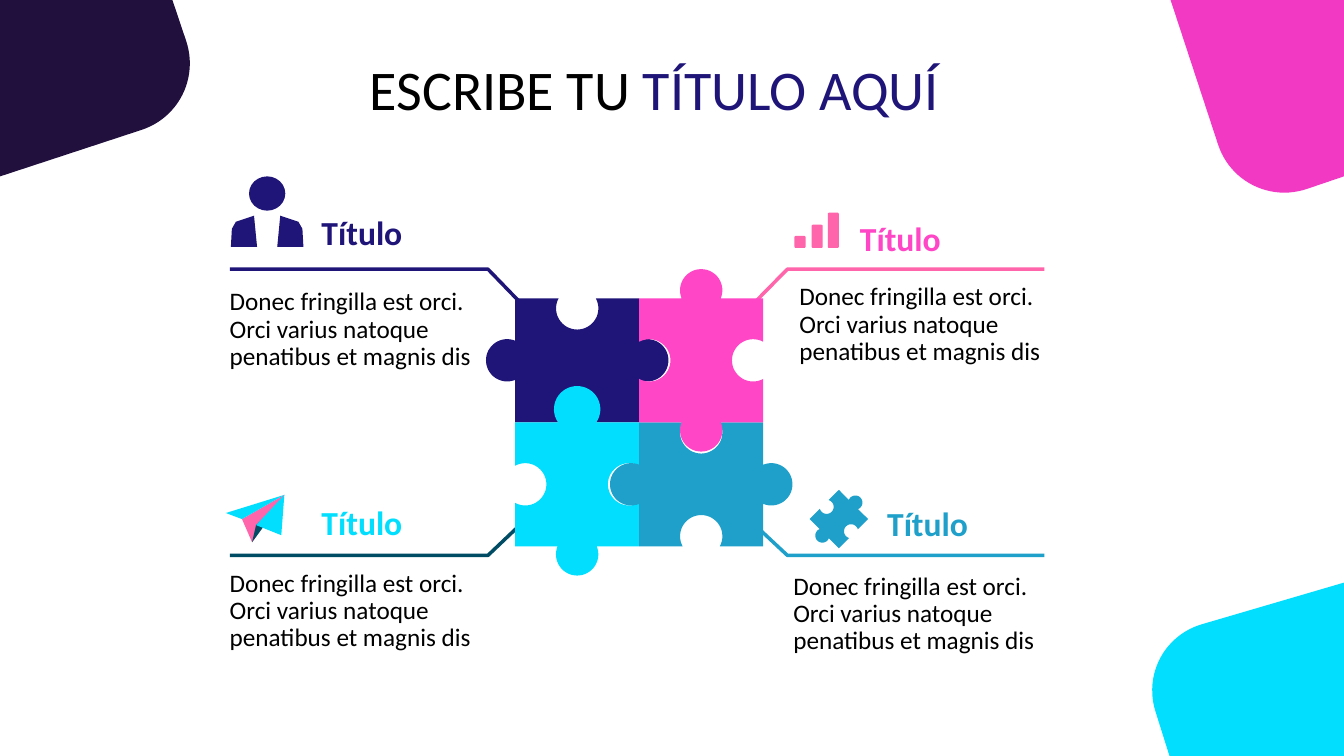
import math

import pptx
import pptx.dml.color
import pptx.enum.shapes
import pptx.enum.text
import pptx.util

Inches, Pt = pptx.util.Inches, pptx.util.Pt
SHAPE = pptx.enum.shapes.MSO_SHAPE

COLORS = {
    "black": "000000", "night": "210F3E", "navy": "1F1579", "magenta": "F239C4",
    "pink": "FF46C6", "rose": "FF65AB", "cyan": "02DFFE", "blue": "1EA0CA", "teal": "004C64",
}
BODY = "Donec fringilla est orci. Orci varius natoque penatibus et magnis dis"

# Corner decoration: point on one edge, rounded vertex, point on the other edge, slide corner
CORNERS = [
    ("magenta", [(11.61, 0), (12.3, 2.1), (13.33, 1.75), (13.33, 0)]),
    ("night", [(1.71, 0), (2.07, 1.07), (0, 1.75), (0, 0)]),
    ("cyan", [(13.33, 5.78), (11.25, 6.39), (11.6, 7.5), (13.33, 7.5)]),
]
ROUNDING = 0.7

# Puzzle: each side has a knob given by centre offset outwards and radius
KNOBS = {"tab": (0.08, 0.21), "notch": (-0.1, 0.21), "tall": (0.13, 0.23)}
PIECE = 1.23
PUZZLE_LEFT, PUZZLE_TOP = 5.11, 2.96
# Colour, column, row, knobs clockwise from the top
PIECES = [
    ("navy", 0, 0, ("notch", "tab", "notch", "tab")),
    ("cyan", 0, 1, ("tall", "notch", "tab", "notch")),
    ("blue", 1, 1, ("notch", "tab", "notch", "tab")),
    ("pink", 1, 0, ("tab", "notch", "tab", "notch")),
]

# Icons
SUIT_CENTRE = 2.65
SUIT_HALF = [(0.1, 2.45), (0.13, 2.14), (0.31, 2.2), (0.35, 2.27), (0.36, 2.45)]
PLANE = [
    ("rose", [(2.82, 4.91), (2.4, 5.15), (2.5, 5.38), (2.75, 5.03)]),
    ("teal", [(2.54, 5.21), (2.5, 5.38), (2.8, 4.97)]),
    ("cyan", [(2.4, 5.15), (2.24, 5.09), (2.82, 4.91)]),
    ("cyan", [(2.82, 4.91), (2.79, 5.31), (2.54, 5.21)]),
]
BARS = [(7.88, 2.34), (8.05, 2.23), (8.21, 2.11)]
BAR_BASE = 2.46

# Leader lines: x from the puzzle outwards, y from the puzzle to the rule
LEFT, RIGHT = (5.44, 4.84, 2.28), (7.2, 7.81, 10.36)
UPPER, LOWER = (3.29, 2.67, 2.67), (4.94, 5.51, 5.51)
# Sections: text colour, heading position, body position, leader colour and course
SECTIONS = [
    ("navy", (3.09, 2.05), (2.18, 2.82), "navy", LEFT, UPPER),
    ("cyan", (3.09, 4.93), (2.18, 5.61), "teal", LEFT, LOWER),
    ("pink", (8.43, 2.11), (7.83, 2.77), "rose", RIGHT, UPPER),
    ("blue", (8.7, 4.94), (7.77, 5.64), "blue", RIGHT, LOWER),
]


def rgb(name):
    return pptx.dml.color.RGBColor.from_string(COLORS[name])


def paint(sp, color):
    sp.shadow.inherit = False
    sp.fill.solid()
    sp.fill.fore_color.rgb = rgb(color)
    sp.line.fill.background()


def add_path(s, points, close):
    pts = [(Inches(x), Inches(y)) for x, y in points]
    builder = s.shapes.build_freeform(*pts[0])
    builder.add_line_segments(pts[1:], close=close)
    return builder.convert_to_shape()


def add_polygon(s, color, points):
    sp = add_path(s, points, True)
    paint(sp, color)
    return sp


def add_corner(s, color, points):
    """Polygon whose second vertex, a right angle, is rounded."""
    before, (vx, vy), after, slide_corner = points

    def towards(x, y):
        length = math.dist((x, y), (vx, vy))
        return (x - vx) / length * ROUNDING, (y - vy) / length * ROUNDING

    (ax, ay), (bx, by) = towards(*before), towards(*after)
    arc = []
    for i in range(25):
        angle = math.pi / 2 * i / 24
        a, b = 1 - math.sin(angle), 1 - math.cos(angle)
        arc.append((vx + a * ax + b * bx, vy + a * ay + b * by))
    add_polygon(s, color, [before, *arc, after, slide_corner])


def add_piece(s, color, cx, cy, knobs, size=PIECE):
    """Square piece around a centre, with one knob on each side."""
    scale = size / PIECE
    points = []
    for side, knob in enumerate(knobs):
        dx, dy = [(1, 0), (0, 1), (-1, 0), (0, -1)][side]
        offset, radius = KNOBS[knob]
        tilt = math.asin(offset / radius)
        start = math.pi + tilt
        end = -tilt if offset > 0 else 2 * math.pi - tilt
        outline = [(-PIECE / 2, 0)]
        for i in range(33):
            angle = start + (end - start) * i / 32
            outline.append((radius * math.cos(angle), offset + radius * math.sin(angle)))
        for along, out in outline:
            out += PIECE / 2
            points.append((cx + scale * (along * dx + out * dy),
                           cy + scale * (along * dy - out * dx)))
    return add_polygon(s, color, points)


def add_leader(s, color, xs, ys):
    sp = add_path(s, list(zip(xs, ys)), False)
    sp.shadow.inherit = False
    sp.fill.background()
    sp.line.color.rgb = rgb(color)
    sp.line.width = Pt(2.5)


def add_preset(s, kind, color, *box):
    sp = s.shapes.add_shape(kind, *map(Inches, box))
    paint(sp, color)
    return sp


def add_text(s, box, runs, size, bold=False, tight=False):
    tf = s.shapes.add_textbox(*map(Inches, box)).text_frame
    tf.word_wrap = True
    p = tf.paragraphs[0]
    p.font.name, p.font.size, p.font.bold = "Calibri", Pt(size), bold
    if tight:
        p.line_spacing, p.space_before = 0.9, Pt(10)
    for text, color in runs:
        r = p.add_run()
        r.text = text
        r.font.color.rgb = rgb(color)
    return p


def add_icons(s):
    # Person
    add_preset(s, SHAPE.OVAL, "navy", 2.47, 1.75, 0.36, 0.34)
    for side in (1, -1):
        add_polygon(s, "navy", [(SUIT_CENTRE + side * x, y) for x, y in SUIT_HALF])
    # Bar chart
    for left, top in BARS:
        bar = add_preset(s, SHAPE.ROUNDED_RECTANGLE, "rose", left, top, 0.11, BAR_BASE - top)
        bar.adjustments[0] = 0.12
    # Paper plane
    for color, points in PLANE:
        add_polygon(s, color, points)
    # Small puzzle piece
    small = add_piece(s, "blue", 8.32, 5.15, ("tab", "notch") * 2, 0.41)
    small.rotation = 45


def main():
    prs = pptx.Presentation()
    prs.slide_width, prs.slide_height = Inches(13.33), Inches(7.5)
    s = prs.slides.add_slide(prs.slide_layouts[6])

    # Corner decoration and leader lines
    for color, points in CORNERS:
        add_corner(s, color, points)
    for *_, color, xs, ys in SECTIONS:
        add_leader(s, color, xs, ys)

    # Puzzle and icons
    for color, column, row, knobs in PIECES:
        add_piece(s, color, PUZZLE_LEFT + (column + 0.5) * PIECE,
                  PUZZLE_TOP + (row + 0.5) * PIECE, knobs)
    add_icons(s)

    # Texts
    for color, heading, body, *_ in SECTIONS:
        add_text(s, (*body, 2.9, 0.94), [(BODY, "black")], 18, tight=True)
        add_text(s, (*heading, 1.58, 0.5), [("Título", color)], 24, bold=True)
    title = add_text(s, (3.03, 0.57, 6.92, 0.87),
                     [("ESCRIBE TU ", "black"), ("TÍTULO AQUÍ", "navy")], 40, tight=True)
    title.alignment = pptx.enum.text.PP_ALIGN.CENTER

    prs.save("out.pptx")


if __name__ == "__main__":
    main()
